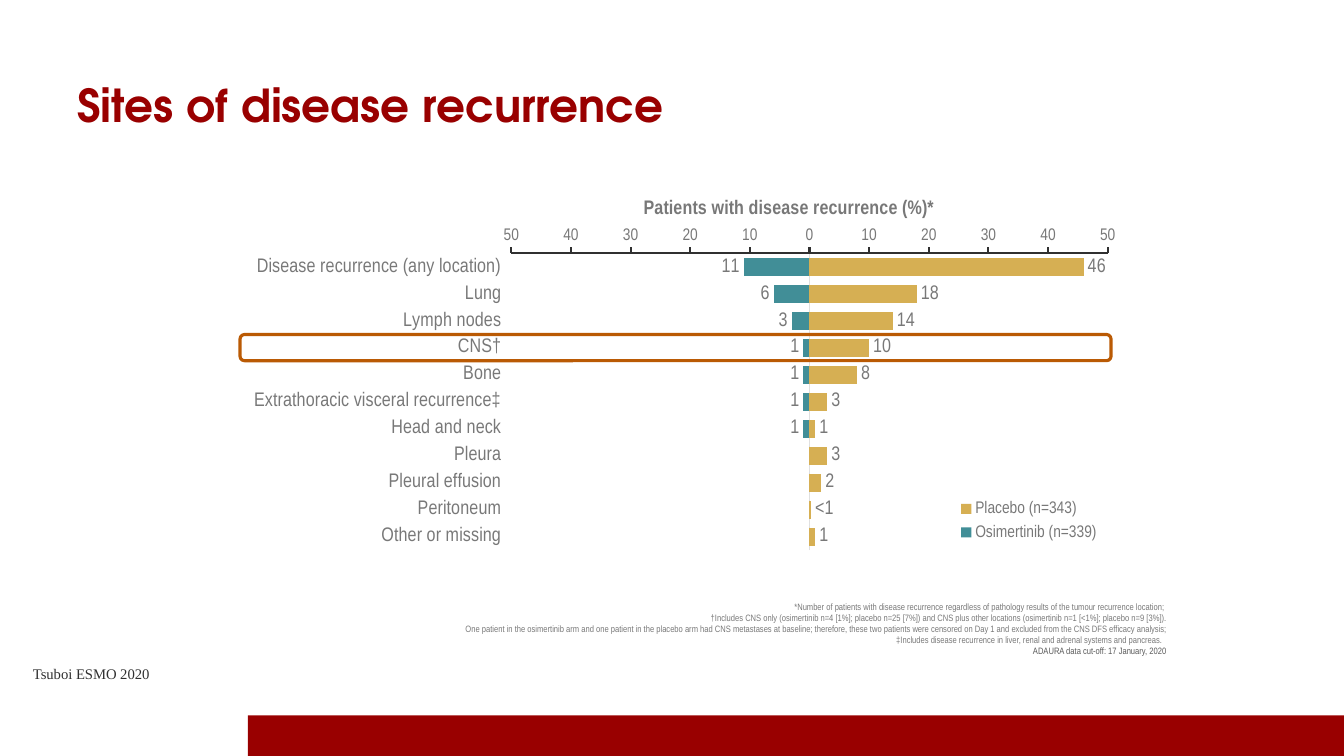
from lxml import etree
from pptx import Presentation
from pptx.chart.data import CategoryChartData
from pptx.dml.color import RGBColor
from pptx.enum.chart import XL_CHART_TYPE, XL_LABEL_POSITION, XL_LEGEND_POSITION, XL_TICK_LABEL_POSITION, XL_TICK_MARK
from pptx.enum.shapes import MSO_SHAPE
from pptx.enum.text import MSO_ANCHOR, PP_ALIGN
from pptx.oxml.ns import qn
from pptx.util import Cm, Pt

BAR_CLUSTERED = XL_CHART_TYPE.BAR_CLUSTERED
OUTSIDE_END = XL_LABEL_POSITION.OUTSIDE_END
LEGEND_BOTTOM = XL_LEGEND_POSITION.BOTTOM
LABELS_LOW = XL_TICK_LABEL_POSITION.LOW
TICK_NONE, TICK_OUTSIDE = XL_TICK_MARK.NONE, XL_TICK_MARK.OUTSIDE
RECTANGLE, ROUNDED = MSO_SHAPE.RECTANGLE, MSO_SHAPE.ROUNDED_RECTANGLE
TOP, MIDDLE, BOTTOM = MSO_ANCHOR.TOP, MSO_ANCHOR.MIDDLE, MSO_ANCHOR.BOTTOM
LEFT, RIGHT = PP_ALIGN.LEFT, PP_ALIGN.RIGHT

COLORS = {
    "red": "990000", "grey": "787878", "dark_grey": "595959", "ink": "303030",
    "pale": "E0E0E0", "teal": "418E97", "gold": "D6AF53", "orange": "BA5A04",
}
CHART_FONT = "Arial Narrow"

TITLE = "Sites of disease recurrence"
SOURCE = "Tsuboi ESMO 2020"
FOOTNOTES = [
    "*Number of patients with disease recurrence regardless of pathology results of the tumour recurrence location; ",
    "†Includes CNS only (osimertinib n=4 [1%]; placebo n=25 [7%]) and CNS plus other locations "
    "(osimertinib n=1 [<1%]; placebo n=9 [3%]).",
    "One patient in the osimertinib arm and one patient in the placebo arm had CNS metastases at baseline; "
    "therefore, these two patients were censored on Day 1 and excluded from the CNS DFS efficacy analysis;",
    "‡Includes disease recurrence in liver, renal and adrenal systems and pancreas.  ",
    "ADAURA data cut-off: 17 January, 2020",
]
AXIS_TITLE = "Patients with disease recurrence (%)*"
SITES = [
    "Disease recurrence (any location)", "Lung", "Lymph nodes", "CNS†", "Bone",
    "Extrathoracic visceral recurrence‡", "Head and neck", "Pleura",
    "Pleural effusion", "Peritoneum", "Other or missing",
]
ARMS = [
    {"name": "Osimertinib (n=339)", "color": "teal", "labels": {},
     "values": [-11, -6, -3, -1, -1, -1, -1, 0, 0, 0, 0]},
    {"name": "Placebo (n=343)", "color": "gold", "labels": {9: "<1"},
     "values": [46, 18, 14, 10, 8, 3, 1, 3, 2, 0.3, 1]},
]


def rgb(name):
    return RGBColor.from_string(COLORS[name])


def box(left, top, width, height):
    return Cm(left), Cm(top), Cm(width), Cm(height)


def set_font(font, size, color="grey", name=CHART_FONT, bold=False):
    font.size, font.name, font.bold = Pt(size), name, bold
    font.color.rgb = rgb(color)


def add_text(slide, place, lines, colors, size, font, bold=False, align=LEFT, anchor=TOP, wrap=True):
    frame = slide.shapes.add_textbox(*place).text_frame
    frame.word_wrap = wrap
    frame.vertical_anchor = anchor
    for index, (line, color) in enumerate(zip(lines, colors)):
        paragraph = frame.add_paragraph() if index else frame.paragraphs[0]
        paragraph.alignment = align
        run = paragraph.add_run()
        run.text = line
        set_font(run.font, size, color, font, bold)


def add_panel(slide, kind, place, fill=None, line=None):
    shape = slide.shapes.add_shape(kind, *place)
    shape.shadow.inherit = False
    if fill:
        shape.fill.solid()
        shape.fill.fore_color.rgb = rgb(fill)
    else:
        shape.fill.background()
    if line:
        shape.line.color.rgb = rgb(line)
        shape.line.width = Pt(2.25)
    else:
        shape.line.fill.background()


def set_layout(parent, position, **values):
    for old in parent.findall(qn("c:layout")):
        parent.remove(old)
    layout = etree.Element(qn("c:layout"))
    manual = etree.SubElement(layout, qn("c:manualLayout"))
    for tag, value in values.items():
        etree.SubElement(manual, qn("c:" + tag)).set("val", str(value))
    parent.insert(position, layout)


def style_axis(axis, size, color, width, tick):
    set_font(axis.tick_labels.font, size)
    axis.format.line.color.rgb = rgb(color)
    axis.format.line.width = Pt(width)
    axis.major_tick_mark = tick
    axis.minor_tick_mark = TICK_NONE
    axis.has_major_gridlines = False


def style_series(series, arm):
    series.invert_if_negative = False
    series.format.fill.solid()
    series.format.fill.fore_color.rgb = rgb(arm["color"])
    labels = series.data_labels
    labels.show_value = True
    labels.position = OUTSIDE_END
    labels.number_format = "0;0;"
    labels.number_format_is_linked = False
    set_font(labels.font, 14)
    for index, text in arm["labels"].items():
        label = series.points[index].data_label
        run = label.text_frame.paragraphs[0].add_run()
        run.text = text
        set_font(run.font, 14)
        label.position = OUTSIDE_END


def add_recurrence_chart(slide, place):
    data = CategoryChartData()
    data.categories = SITES
    for arm in ARMS:
        data.add_series(arm["name"], arm["values"])
    chart = slide.shapes.add_chart(BAR_CLUSTERED, *place, data).chart
    set_font(chart.font, 14)
    chart.has_title = False
    plot = chart.plots[0]
    plot.gap_width, plot.overlap, plot.vary_by_categories = 50, 100, False
    for series, arm in zip(plot.series, ARMS):
        style_series(series, arm)

    sites = chart.category_axis
    style_axis(sites, 14, "pale", 0.75, TICK_NONE)
    sites.reverse_order = True
    sites.tick_label_position = LABELS_LOW

    percent = chart.value_axis
    style_axis(percent, 12, "ink", 1.5, TICK_OUTSIDE)
    percent.minimum_scale, percent.maximum_scale, percent.major_unit = -50, 50, 10
    percent.tick_labels.number_format = "#,##0;#,##0"
    percent.tick_labels.number_format_is_linked = False
    run = percent.axis_title.text_frame.paragraphs[0].add_run()
    run.text = AXIS_TITLE
    set_font(run.font, 14, bold=True)
    set_layout(percent.axis_title._element, 1, xMode="edge", yMode="edge", x=0.47, y=0.03)

    chart.has_legend = True
    legend = chart.legend
    legend.position = LEGEND_BOTTOM
    legend.include_in_layout = False
    set_font(legend.font, 12)
    set_layout(legend._element, 1, xMode="edge", yMode="edge", x=0.81, y=0.74, w=0.16, h=0.13)
    set_layout(chart._chartSpace.chart.plotArea, 0, layoutTarget="inner",
               xMode="edge", yMode="edge", x=0.331, y=0.171, w=0.644, h=0.704)


def main():
    presentation = Presentation()
    presentation.slide_width, presentation.slide_height = Cm(33.87), Cm(19.05)
    slide = presentation.slides.add_slide(presentation.slide_layouts[6])
    add_panel(slide, RECTANGLE, box(6.25, 18.03, 27.62, 1.02), fill="red")
    add_text(slide, box(6.96, 14.99, 22.68, 1.68), FOOTNOTES, ["grey"] * 4 + ["dark_grey"],
             6.6, CHART_FONT, align=RIGHT, anchor=BOTTOM)
    add_recurrence_chart(slide, box(5.16, 4.57, 23.34, 10.62))
    add_panel(slide, ROUNDED, box(6.05, 8.43, 21.95, 0.66), line="orange")
    add_text(slide, box(1.7, 1.26, 30.48, 2.74), [TITLE], ["red"], 32.4, "TeX Gyre Adventor",
             bold=True, anchor=MIDDLE)
    add_text(slide, box(0.58, 16.63, 3.45, 0.71), [SOURCE], ["ink"], 10.5, "Times New Roman", wrap=False)
    presentation.save("out.pptx")


if __name__ == "__main__":
    main()
